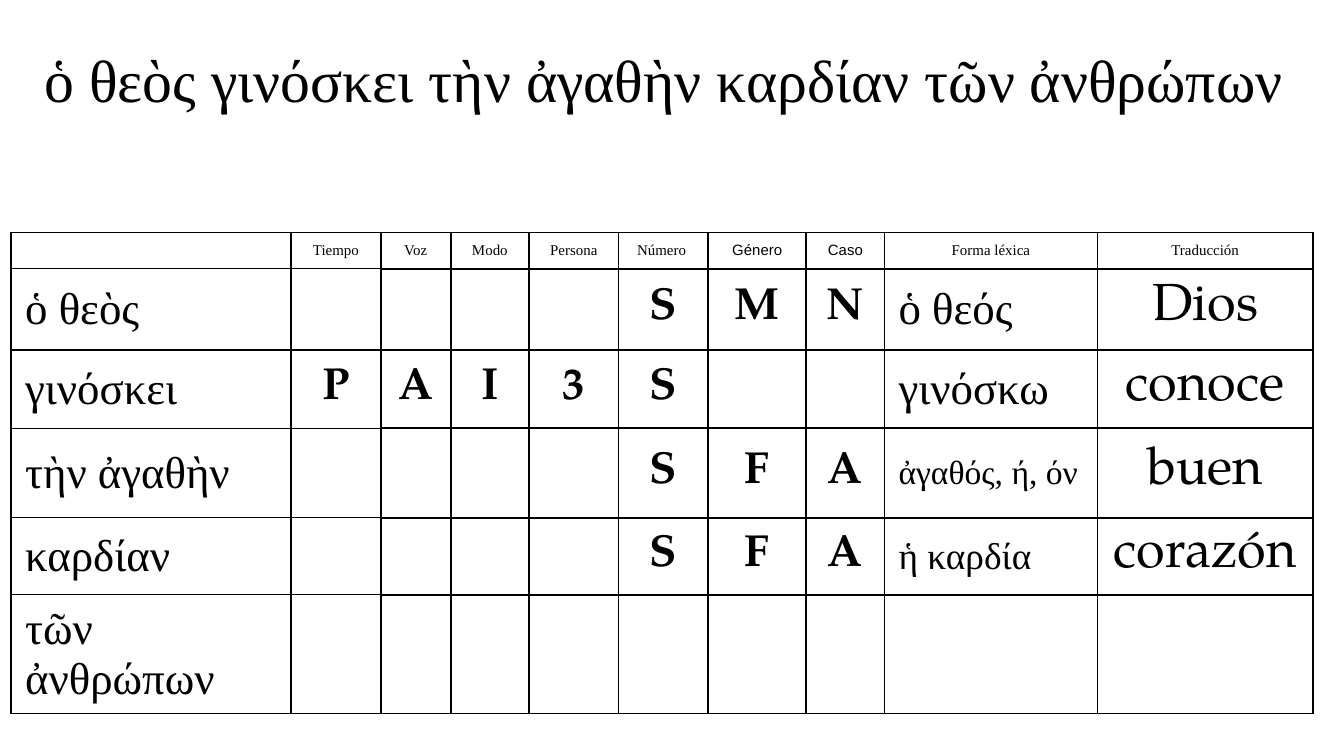
from dataclasses import dataclass
from lxml.etree import SubElement
from pptx import Presentation
from pptx.dml.color import RGBColor
from pptx.enum.text import MSO_ANCHOR as Anchor, MSO_AUTO_SIZE as Fit, PP_ALIGN as Align
from pptx.oxml import parse_xml
from pptx.oxml.ns import nsdecls, qn
from pptx.util import Emu, Pt

SCALE = 9525  # EMU in one px, at 96 px to the inch


def px(n: int) -> Emu:
    return Emu(n * SCALE)


@dataclass(frozen=True)
class Style:
    face: str
    size: int
    bold: bool = False
    align: Align = Align.CENTER


@dataclass(frozen=True)
class Theme:
    ink: str = "000000"
    serif: str = "Times New Roman"
    book: str = "TeX Gyre Pagella"
    sans: str = "Arial"
    title: int = 32
    head: int = 8
    word: int = 24
    gloss: int = 28
    line: float = 1
    thin: float = 0.75


@dataclass(frozen=True)
class Word:
    """One parsed word; gap and lift are the space before form and lemma, in percent."""
    form: str
    tags: str
    lemma: str
    gloss: str
    gap: int
    lift: int
    size: int = 24


THEME = Theme()
# Polytonic Greek: modern tonos vowels (eta, iota, omicron, omega) become oxia vowels.
OXIA = {0x3AE: 0x1F75, 0x3AF: 0x1F77, 0x3CC: 0x1F79, 0x3CE: 0x1F7D}
COLS = (200, 64, 50, 56, 64, 64, 70, 56, 152, 154)
ROWS = (26, 58, 56, 64, 55, 52)
HEADS = ("", "Tiempo", "Voz", "Modo", "Persona", "Número ", "Género",
         "Caso", "Forma léxica", "Traducción")
SANS = ("Género", "Caso")
# Each tag letter stands for one column from Tiempo to Caso; a dot is an empty cell.
WORDS = (
    Word("ὁ θεὸς", "....SMN", "ὁ θεός", "Dios", 20, 20),
    Word("γινόσκει", "PAI3S..", "γινόσκω", "conoce", 50, 50),
    Word("τὴν ἀγαθὴν", "....SFA", "ἀγαθός, ή, όν", "buen", 20, 0, 18),
    Word("καρδίαν", "....SFA", "ἡ καρδία", "corazón", 20, 20, 20),
    Word("τῶν ἀνθρώπων", ".......", "", "", 50, 0),
)


def write(frame, text: str, style: Style, gap: int = 0) -> None:
    """Fill a text frame with one paragraph; gap is its space before in percent."""
    para = frame.paragraphs[0]
    para.alignment = style.align
    font = para.font
    font.name, font.size, font.bold = style.face, Pt(style.size), style.bold
    font.color.rgb = RGBColor.from_string(THEME.ink)
    if gap:
        para._p.get_or_add_pPr().insert(0, parse_xml(
            f'<a:spcBef {nsdecls("a")}><a:spcPct val="{gap * 1000}"/></a:spcBef>'))
    if text:
        para.add_run().text = text.translate(OXIA)
    else:
        SubElement(para._p, qn("a:endParaRPr"), sz=str(style.size * 100))


def edge(cell, sides: dict[str, float]) -> None:
    props = cell._tc.get_or_add_tcPr()
    for spot, (side, width) in enumerate(sides.items()):
        props.insert(spot, parse_xml(
            f'<a:ln{side} {nsdecls("a")} w="{Pt(width)}"><a:solidFill>'
            f'<a:srgbClr val="{THEME.ink}"/></a:solidFill></a:ln{side}>'))


def draw_cell(table, row: int, col: int, text: str, style: Style, gap: int = 0) -> None:
    cell = table.cell(row, col)
    cell.vertical_anchor = Anchor.MIDDLE
    cell.margin_left = cell.margin_right = px(10)
    cell.margin_top = cell.margin_bottom = px(4)
    write(cell.text_frame, text, style, gap)
    rule = THEME.thin if col < 2 else THEME.line
    edge(cell, {"L": THEME.line, "R": THEME.line,
                "T": rule if row else THEME.line, "B": rule})
    cell.fill.background()


def draw_title(slide) -> None:
    box = slide.shapes.title
    box.left, box.top, box.width, box.height = px(16), px(26), px(928), px(61)
    frame = box.text_frame
    frame.word_wrap = True
    frame.auto_size = Fit.SHAPE_TO_FIT_TEXT
    frame.vertical_anchor = Anchor.TOP
    write(frame, "ὁ θεὸς γινόσκει τὴν ἀγαθὴν καρδίαν τῶν ἀνθρώπων ",
          Style(THEME.serif, THEME.title), 50)


def draw_table(slide) -> None:
    table = slide.shapes.add_table(len(ROWS), len(COLS), px(8), px(166),
                                   px(sum(COLS)), px(sum(ROWS))).table
    table.first_row = table.horz_banding = False
    for col, width in zip(table.columns, COLS):
        col.width = px(width)
    for row, height in zip(table.rows, ROWS):
        row.height = px(height)

    for col, text in enumerate(HEADS):
        face = THEME.sans if text in SANS else THEME.serif
        draw_cell(table, 0, col, text, Style(face, THEME.head))

    form = Style(THEME.serif, THEME.word, align=Align.LEFT)
    tag = Style(THEME.book, THEME.word, bold=True)
    gloss = Style(THEME.book, THEME.gloss)
    for row, word in enumerate(WORDS, 1):
        draw_cell(table, row, 0, word.form, form, word.gap)
        for col, mark in enumerate(word.tags, 1):
            draw_cell(table, row, col, mark.strip("."), tag)
        lemma = Style(THEME.serif, word.size, align=Align.LEFT)
        draw_cell(table, row, 8, word.lemma, lemma, word.lift)
        draw_cell(table, row, 9, word.gloss, gloss)


def main() -> None:
    deck = Presentation()
    deck.slide_width, deck.slide_height = px(960), px(540)
    slide = deck.slides.add_slide(deck.slide_layouts[5])
    draw_title(slide)
    draw_table(slide)
    deck.save("out.pptx")


if __name__ == "__main__":
    main()
